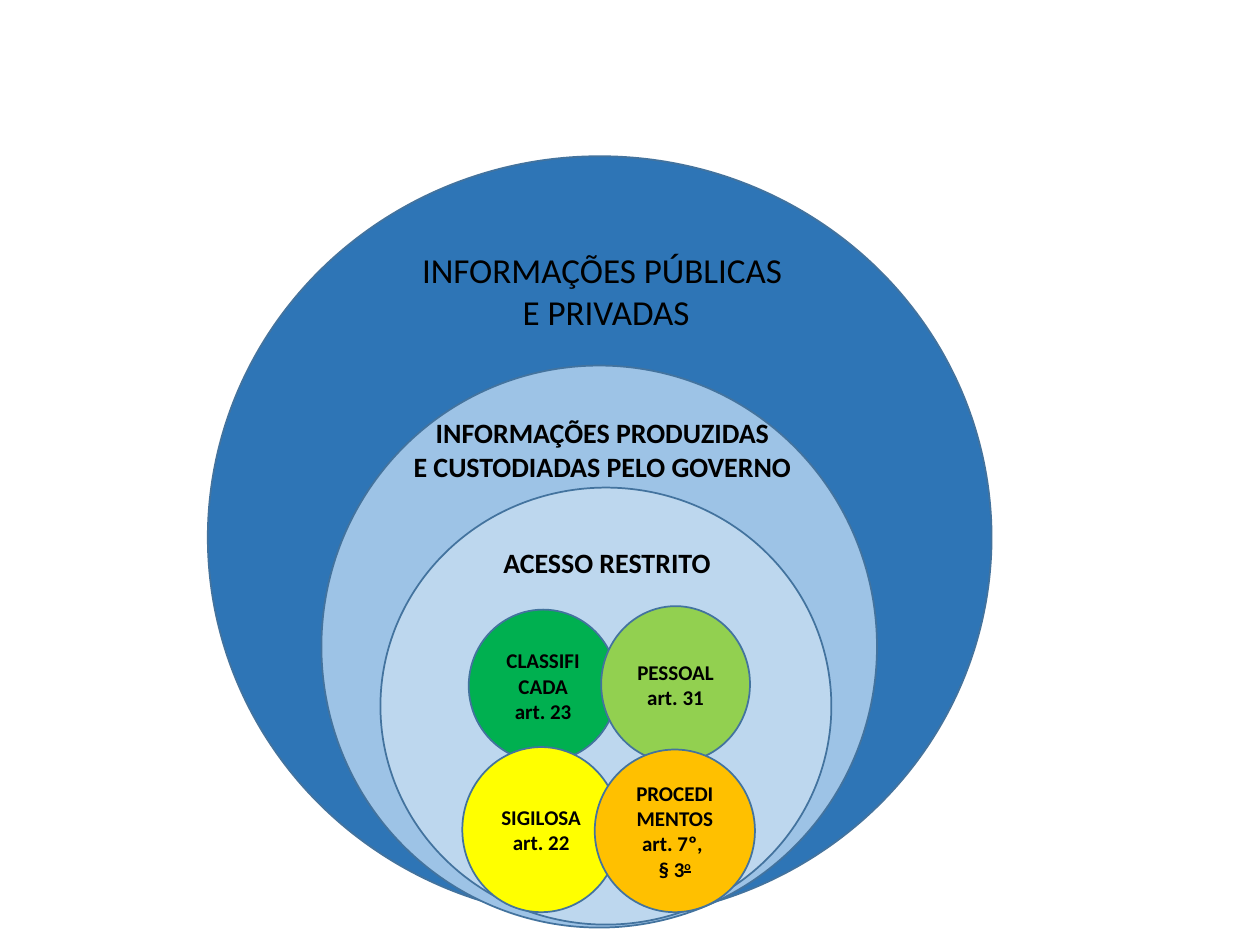
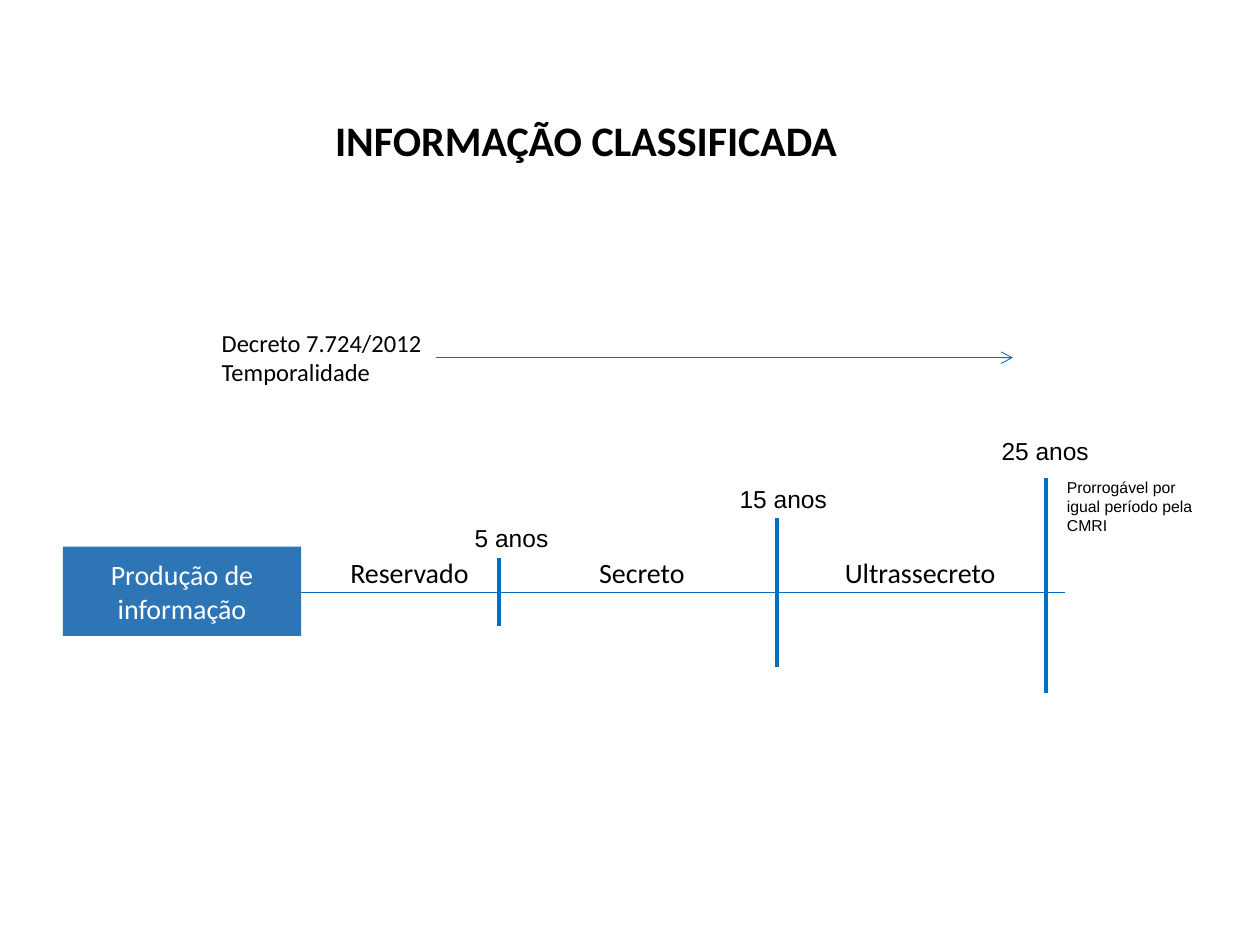
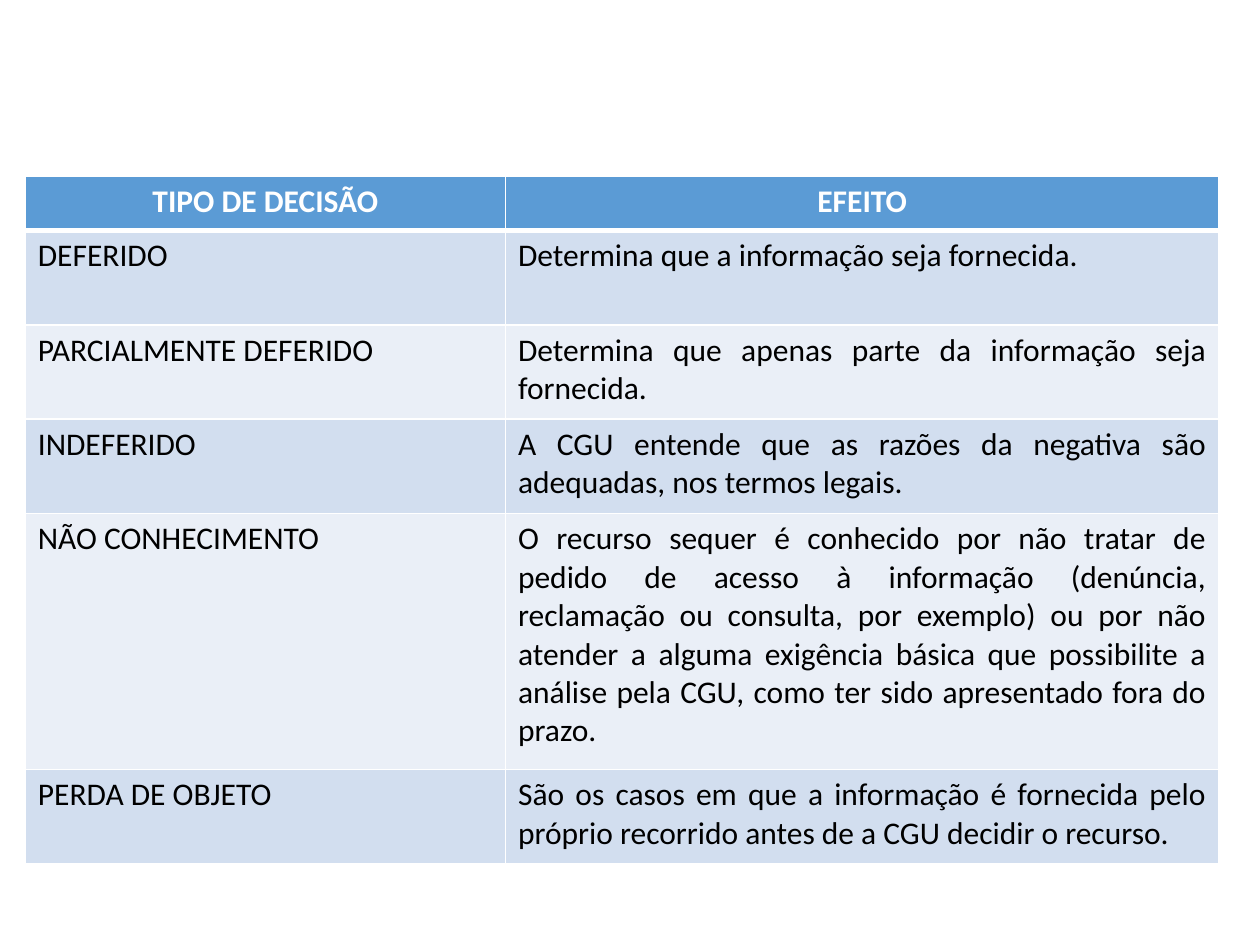
import pptx
import pptx.dml.color
import pptx.enum.shapes
import pptx.enum.text
import pptx.oxml
import pptx.oxml.ns
import pptx.util
from pptx.util import Cm

COLORS = {
    "black": "000000", "white": "FFFFFF", "outline": "43739E",
    "blue": "2E75B6", "mid_blue": "9DC3E6", "pale_blue": "BDD7EE",
    "green": "00B050", "lime": "92D050", "yellow": "FFFF00", "amber": "FFC000",
    "line": "0070C0", "header": "5B9BD5", "band_dark": "D2DEEF", "band_light": "EAEFF7",
}
RGB = {name: pptx.dml.color.RGBColor.from_string(value) for name, value in COLORS.items()}
SHAPE = pptx.enum.shapes.MSO_SHAPE
ALIGN = pptx.enum.text.PP_ALIGN
LEFT, CENTER, JUSTIFY = ALIGN.LEFT, ALIGN.CENTER, ALIGN.JUSTIFY
TOP, MIDDLE = pptx.enum.text.MSO_ANCHOR.TOP, pptx.enum.text.MSO_ANCHOR.MIDDLE


def write(tf, text, size=16, font="Calibri", color="black", bold=False,
          align=CENTER, wrap=True, superscript=""):
    """Fill a text frame, one paragraph per line; superscript ends the last line."""
    tf.word_wrap = wrap
    for i, line in enumerate(text.split("\n")):
        p = tf.paragraphs[0] if i == 0 else tf.add_paragraph()
        p.alignment = align
        p.add_run().text = line
    if superscript:
        r = p.add_run()
        r.text = superscript
        r.font.underline = True
        r.font._element.set("baseline", "30000")
    for p in tf.paragraphs:
        for r in p.runs:
            r.font.name = font
            r.font.size = pptx.util.Pt(size)
            r.font.bold = bold
            r.font.color.rgb = RGB[color]


def add_line(s, x1, y1, x2, y2, width):
    line = s.shapes.add_connector(pptx.enum.shapes.MSO_CONNECTOR.STRAIGHT,
                                  Cm(x1), Cm(y1), Cm(x2), Cm(y2))
    line.line.color.rgb = RGB["line"]
    line.line.width = pptx.util.Pt(width)
    pptx.oxml.ns.qn("a:effectLst")
    line._element.spPr.append(
        pptx.oxml.parse_xml(f"<a:effectLst {pptx.oxml.ns.nsdecls('a')}/>"))
    return line


prs = pptx.Presentation()
prs.slide_width, prs.slide_height = Cm(25.4), Cm(19.05)
title_only, blank = prs.slide_layouts[5], prs.slide_layouts[6]

# Slide 1: nested sets of information
s = prs.slides.add_slide(blank)
circles = [
    ("", "blue", (4.19, 3.15, 15.8, 15.37), ""),
    ("", "mid_blue", (6.48, 7.37, 11.2, 11.33), ""),
    ("", "pale_blue", (7.67, 9.83, 9.09, 8.81), ""),
    ("CLASSIFICADA\nart. 23", "green", (9.45, 12.29, 3, 3.07), ""),
    ("PESSOAL\nart. 31", "lime", (12.12, 12.22, 3, 3.15), ""),
    ("SIGILOSA\nart. 22", "yellow", (9.32, 15.06, 3.18, 3.33), ""),
    ("PROCEDIMENTOS\nart. 7º, \n§ 3", "amber", (11.99, 15.11, 3.23, 3.28), "o"),
]
for text, color, box, superscript in circles:
    sp = s.shapes.add_shape(SHAPE.OVAL, *map(Cm, box))
    sp.shadow.inherit = False
    sp.fill.solid()
    sp.fill.fore_color.rgb = RGB[color]
    sp.line.color.rgb = RGB["outline"]
    sp.line.width = pptx.util.Pt(1)
    if text:
        sp.text_frame.vertical_anchor = MIDDLE
        write(sp.text_frame, text, size=12, bold=True, superscript=superscript)

set_names = [
    ("INFORMAÇÕES PÚBLICAS \nE PRIVADAS", (8.03, 4.88, 8.38, 1.96), 20, False),
    ("INFORMAÇÕES PRODUZIDAS\nE CUSTODIADAS PELO GOVERNO", (8.03, 8.26, 8.23, 1.63), 16, True),
    ("ACESSO RESTRITO", (9.86, 10.87, 4.75, 0.94), 16, True),
]
for text, box, size, bold in set_names:
    tf = s.shapes.add_textbox(*map(Cm, box)).text_frame
    write(tf, text, size=size, bold=bold, wrap=False)

# Slide 2: secrecy timeline
s = prs.slides.add_slide(title_only)
title = s.shapes.title
title.left, title.top, title.width, title.height = map(Cm, (6.5, 2.18, 11.1, 1.27))
title.text_frame.auto_size = pptx.enum.text.MSO_AUTO_SIZE.NONE
title.text_frame.vertical_anchor = TOP
write(title.text_frame, "INFORMAÇÃO CLASSIFICADA", size=24, bold=True, align=LEFT)

start = s.shapes.add_shape(SHAPE.RECTANGLE, Cm(1.27), Cm(11.02), Cm(4.8), Cm(1.8))
start.shadow.inherit = False
start.fill.solid()
start.fill.fore_color.rgb = RGB["blue"]
start.line.fill.background()
start.text_frame.vertical_anchor = MIDDLE
write(start.text_frame, "Produção de informação", color="white")

add_line(s, 6.07, 11.94, 21.46, 11.94, 0.5)
arrow = add_line(s, 8.79, 7.21, 20.42, 7.21, 0.5)
arrow.line._get_or_add_ln().append(
    pptx.oxml.parse_xml(f'<a:tailEnd {pptx.oxml.ns.nsdecls("a")} type="arrow"/>'))
for x, top, bottom in [(10.06, 11.25, 12.62), (15.67, 10.44, 13.44), (21.08, 9.63, 13.97)]:
    add_line(s, x, top, x, bottom, 2.25)

for text, left, width in [("Reservado", 6.78, 2.95), ("Secreto", 11.81, 2.26),
                          ("Ultrassecreto", 16.76, 3.58)]:
    tf = s.shapes.add_textbox(Cm(left), Cm(11.07), Cm(width), Cm(0.94)).text_frame
    write(tf, text, wrap=False)

notes = [
    ("Decreto 7.724/2012\nTemporalidade", (4.22, 6.48, 4.57, 1.45), 14, "Calibri", False),
    ("5 anos", (9.32, 10.41, 2.01, 0.86), 14, "Arial", False),
    ("15 anos", (14.66, 9.63, 2.29, 0.86), 14, "Arial", False),
    ("25 anos", (19.94, 8.66, 2.29, 0.86), 14, "Arial", False),
    ("Prorrogável por igual período pela CMRI", (21.26, 9.5, 3.2, 1.42), 9, "Arial", True),
]
for text, box, size, font, wrap in notes:
    tf = s.shapes.add_textbox(*map(Cm, box)).text_frame
    write(tf, text, size=size, font=font, align=LEFT, wrap=wrap)

# Slide 3: decisions and their effects
s = prs.slides.add_slide(blank)
decisions = [
    ("TIPO DE DECISÃO", "EFEITO", 1.09),
    ("DEFERIDO", "Determina que a informação seja fornecida.", 1.9),
    ("PARCIALMENTE DEFERIDO", "Determina que apenas parte da informação seja fornecida.", 1.9),
    ("INDEFERIDO",
     "A CGU entende que as razões da negativa são adequadas, nos termos legais.", 1.9),
    ("NÃO CONHECIMENTO",
     "O recurso sequer é conhecido por não tratar de pedido de acesso à informação "
     "(denúncia, reclamação ou consulta, por exemplo) ou por não atender a alguma "
     "exigência básica que possibilite a análise pela CGU, como ter sido apresentado "
     "fora do prazo.", 5.16),
    ("PERDA DE OBJETO",
     "São os casos em que a informação é fornecida pelo próprio recorrido antes de a "
     "CGU decidir o recurso.", 1.9),
]
table = s.shapes.add_table(len(decisions), 2, Cm(0.51), Cm(3.56), Cm(24.06), Cm(13.85)).table
table.columns[0].width, table.columns[1].width = Cm(9.68), Cm(14.38)
for i, (decision, effect, height) in enumerate(decisions):
    table.rows[i].height = Cm(height)
    is_header = i == 0
    fill = "header" if is_header else "band_dark" if i % 2 else "band_light"
    borders = {"lnL": 1, "lnR": 1, "lnT": 3 if i == 1 else 1, "lnB": 3 if is_header else 1}
    for j, text in enumerate((decision, effect)):
        cell = table.cell(i, j)
        for side, width in borders.items():
            cell._tc.get_or_add_tcPr().append(pptx.oxml.parse_xml(
                f'<a:{side} {pptx.oxml.ns.nsdecls("a")} w="{pptx.util.Pt(width)}"><a:solidFill>'
                f'<a:srgbClr val="{COLORS["white"]}"/></a:solidFill></a:{side}>'))
        cell.fill.solid()
        cell.fill.fore_color.rgb = RGB[fill]
        write(cell.text_frame, text, size=18, bold=is_header,
              color="white" if is_header else "black",
              align=CENTER if is_header else (LEFT, JUSTIFY)[j])

prs.save("out.pptx")
